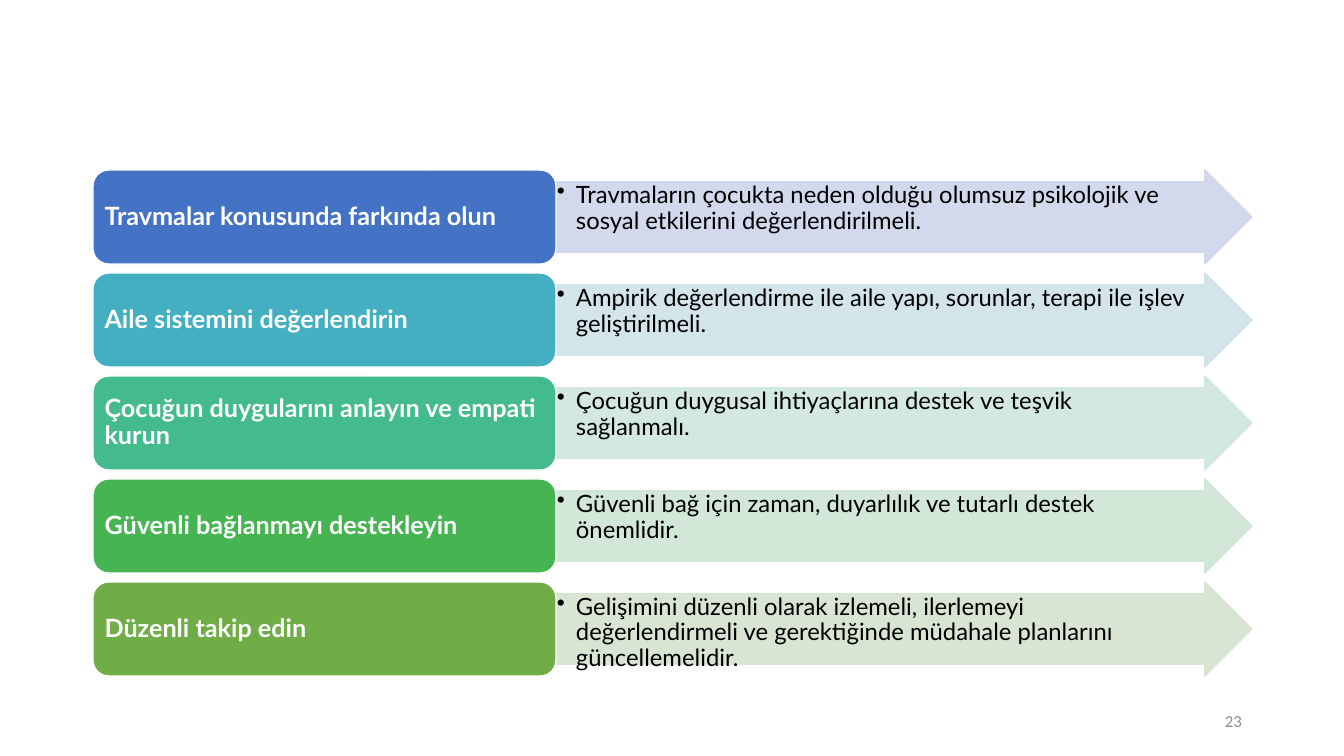
from dataclasses import dataclass

from lxml import etree
from pptx import Presentation
from pptx.dml.color import RGBColor
from pptx.enum.shapes import MSO_SHAPE
from pptx.enum.text import MSO_ANCHOR, PP_ALIGN
from pptx.oxml.ns import qn
from pptx.util import Emu, Pt

ROUNDED = MSO_SHAPE.ROUNDED_RECTANGLE
ARROW = MSO_SHAPE.RIGHT_ARROW
TOP = MSO_ANCHOR.TOP
MIDDLE = MSO_ANCHOR.MIDDLE
LEFT = PP_ALIGN.LEFT
RIGHT = PP_ALIGN.RIGHT


@dataclass(frozen=True)
class Theme:
    white: str = "FFFFFF"
    black: str = "000000"
    gray: str = "8C8C8C"
    body_font: str = "Lato"
    number_font: str = "Calibri"
    heading_size: int = 18
    detail_size: int = 17
    number_size: int = 12


theme = Theme()
STEPS = [
    ("Travmalar konusunda farkında olun",
     "Travmaların çocukta neden olduğu olumsuz psikolojik ve sosyal etkilerini değerlendirilmeli.",
     "4472C4", "CFD5EA"),
    ("Aile sistemini değerlendirin",
     "Ampirik değerlendirme ile aile yapı, sorunlar, terapi ile işlev geliştirilmeli.",
     "43AFC0", "CFE2E8"),
    ("Çocuğun duygularını anlayın ve empati kurun",
     "Çocuğun duygusal ihtiyaçlarına destek ve teşvik sağlanmalı.",
     "43BB8D", "CFE6E0"),
    ("Güvenli bağlanmayı destekleyin",
     "Güvenli bağ için zaman, duyarlılık ve tutarlı destek önemlidir.",
     "45B451", "CFE5D4"),
    ("Düzenli takip edin",
     "Gelişimini düzenli olarak izlemeli, ilerlemeyi değerlendirmeli ve gerektiğinde "
     "müdahale planlarını güncellemelidir.",
     "70AD47", "D5E3CF"),
]
ROW_TOP, ROW_PITCH, ROW_HEIGHT = 170, 103, 94
HEADING_LEFT, HEADING_WIDTH = 93, 463
ARROW_LEFT, ARROW_WIDTH = HEADING_LEFT + HEADING_WIDTH, 696


def px(value):
    return Emu(round(value * 914400 / 100.8))


def write_text(shape, text, margins, anchor, alignment, font_name, size, color, bold=False):
    frame = shape.text_frame
    frame.word_wrap = True
    frame.vertical_anchor = anchor
    frame.margin_left, frame.margin_top, frame.margin_right, frame.margin_bottom = map(px, margins)
    paragraph = frame.paragraphs[0]
    paragraph.alignment = alignment
    run = paragraph.add_run()
    run.text = text
    run.font.name = font_name
    run.font.size = Pt(size)
    run.font.bold = bold
    run.font.color.rgb = RGBColor.from_string(color)
    return paragraph


presentation = Presentation()
presentation.slide_width = px(1344)
presentation.slide_height = px(756)
slide = presentation.slides.add_slide(presentation.slide_layouts[6])

for row, (heading, detail, heading_color, arrow_color) in enumerate(STEPS):
    top = ROW_TOP + row * ROW_PITCH

    arrow = slide.shapes.add_shape(
        ARROW, px(ARROW_LEFT), px(top), px(ARROW_WIDTH), px(ROW_HEIGHT))
    arrow.adjustments[0] = 0.75
    arrow.adjustments[1] = 0.5
    detail_paragraph = write_text(
        arrow, detail, (1, 1, 25, 1), TOP, LEFT,
        theme.body_font, theme.detail_size, theme.black)
    properties = detail_paragraph._p.get_or_add_pPr()
    properties.set("marL", str(px(19)))
    properties.set("indent", str(-px(19)))
    etree.SubElement(properties, qn("a:buChar")).set("char", "•")
    detail_paragraph.line_spacing = 0.9

    box = slide.shapes.add_shape(
        ROUNDED, px(HEADING_LEFT), px(top), px(HEADING_WIDTH), px(ROW_HEIGHT))
    heading_paragraph = write_text(
        box, heading, (7, 4, 7, 4), MIDDLE, LEFT,
        theme.body_font, theme.heading_size, theme.white, True)
    heading_paragraph.line_spacing = 0.9

    for shape, fill_color, line_color in (
            (arrow, arrow_color, arrow_color), (box, heading_color, theme.white)):
        shape.shadow.inherit = False
        shape.fill.solid()
        shape.fill.fore_color.rgb = RGBColor.from_string(fill_color)
        shape.line.color.rgb = RGBColor.from_string(line_color)
        shape.line.width = Pt(1)

    for color in arrow._element.spPr.iter(qn("a:srgbClr")):
        etree.SubElement(color, qn("a:alpha")).set("val", "90000")

page_number = slide.shapes.add_textbox(px(950), px(701), px(302), px(40))
write_text(page_number, "23", (10, 5, 10, 5), MIDDLE, RIGHT,
           theme.number_font, theme.number_size, theme.gray)

presentation.save("out.pptx")
